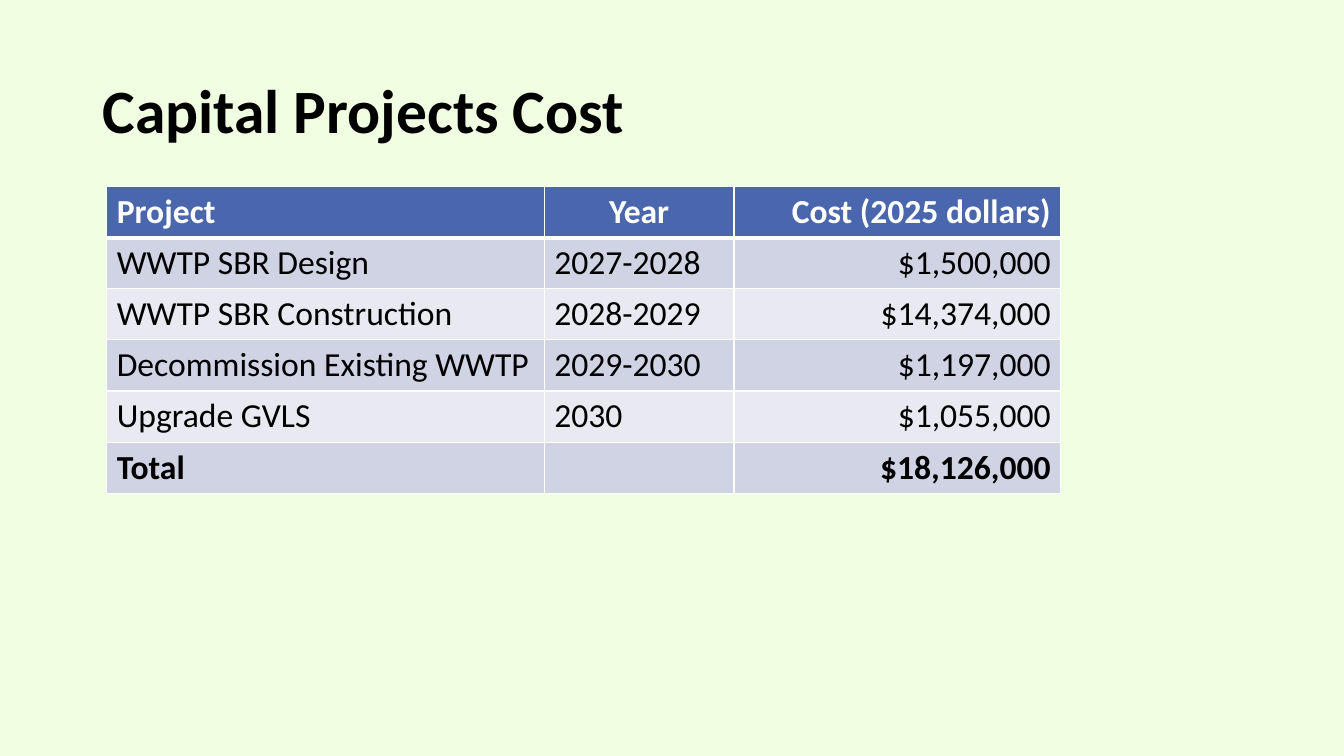
from lxml.etree import SubElement
from pptx import Presentation
from pptx.dml.color import RGBColor
from pptx.enum.text import MSO_ANCHOR, PP_ALIGN
from pptx.oxml.ns import qn
from pptx.util import Pt

COLORS = {
    "background": "F0FFE1",
    "header": "4A66AC",
    "odd_row": "D0D3E3",
    "even_row": "E9EAF1",
    "text": "000000",
    "white": "FFFFFF",
}
FONT = "Calibri"
COLUMN_WIDTHS = [312.5, 135.5, 233.5]
ROW_HEIGHT = 36.5
PROJECTS = [
    ("Project", "Year", "Cost (2025 dollars)"),
    ("WWTP SBR Design", "2027-2028", "$1,500,000"),
    ("WWTP SBR Construction", "2028-2029", "$14,374,000"),
    ("Decommission Existing WWTP", "2029-2030", "$1,197,000"),
    ("Upgrade GVLS", "2030", "$1,055,000"),
    ("Total", "", "$18,126,000"),
]


def color(name):
    return RGBColor.from_string(COLORS[name])


def set_font(paragraph, size, color_name, bold):
    font = paragraph.font
    font.name = FONT
    font.size = Pt(size)
    font.bold = bold
    font.color.rgb = color(color_name)


def add_title(slide, text):
    title = slide.shapes.title
    title.left, title.top, title.width, title.height = Pt(66), Pt(28.75), Pt(828), Pt(104.5)
    title.text_frame.text = text
    title.text_frame.vertical_anchor = MSO_ANCHOR.MIDDLE
    heading = title.text_frame.paragraphs[0]
    heading.alignment = PP_ALIGN.LEFT
    heading.line_spacing = 0.9
    set_font(heading, 44, "text", True)


def set_borders(cell, widths):
    properties = cell._tc.get_or_add_tcPr()
    for side, width in widths.items():
        line = SubElement(properties, qn(f"a:ln{side}"), w=str(Pt(width)))
        fill = SubElement(line, qn("a:solidFill"))
        SubElement(fill, qn("a:srgbClr"), val=COLORS["white"])


def format_cell(cell, row, column):
    is_header = row == 0
    is_total = row == len(PROJECTS) - 1
    set_borders(cell, {"L": 1, "R": 1, "T": 3 if row == 1 else 1, "B": 3 if is_header else 1})
    cell.fill.solid()
    cell.fill.fore_color.rgb = color("header" if is_header else "odd_row" if row % 2 else "even_row")
    entry = cell.text_frame.paragraphs[0]
    if column == 2:
        entry.alignment = PP_ALIGN.RIGHT
    elif column == 1 and is_header:
        entry.alignment = PP_ALIGN.CENTER
    set_font(entry, 24, "white" if is_header else "text", is_header or is_total)


def add_cost_table(slide):
    costs = slide.shapes.add_table(
        len(PROJECTS), len(COLUMN_WIDTHS), Pt(76.25), Pt(133.25),
        Pt(sum(COLUMN_WIDTHS)), Pt(ROW_HEIGHT * len(PROJECTS)),
    ).table
    for column, width in zip(costs.columns, COLUMN_WIDTHS):
        column.width = Pt(width)
    for row, project in enumerate(PROJECTS):
        costs.rows[row].height = Pt(ROW_HEIGHT)
        for column, text in enumerate(project):
            cell = costs.cell(row, column)
            cell.text = text
            format_cell(cell, row, column)


def main():
    presentation = Presentation()
    presentation.slide_width, presentation.slide_height = Pt(960), Pt(540)
    slide = presentation.slides.add_slide(presentation.slide_layouts[5])
    slide.background.fill.solid()
    slide.background.fill.fore_color.rgb = color("background")
    add_title(slide, "Capital Projects Cost")
    add_cost_table(slide)
    presentation.save("out.pptx")


if __name__ == "__main__":
    main()
